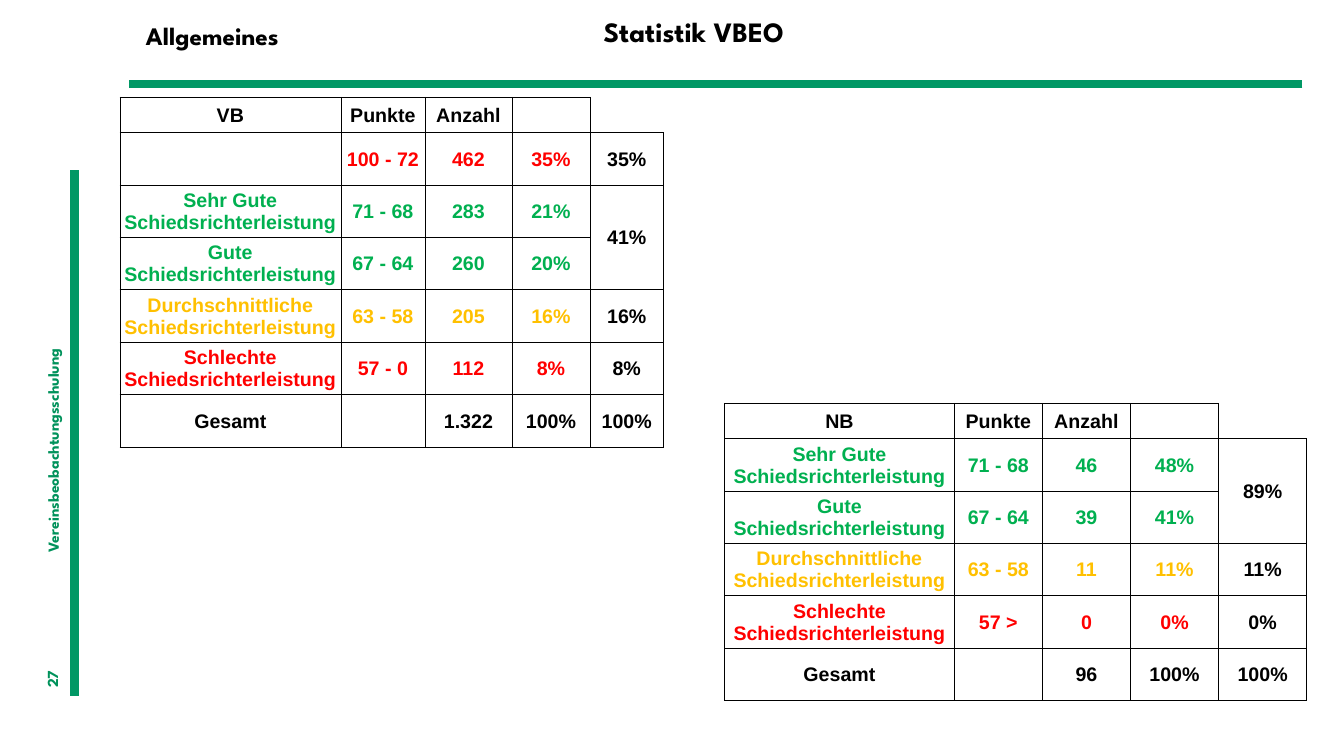
from lxml import etree
from pptx import Presentation
from pptx import util as u
from pptx.dml.color import RGBColor
from pptx.enum import shapes, text
from pptx.oxml.ns import qn

COLOURS = {"rule": "019865", "side": "00925B", "ink": "000000", "paper": "FFFFFF",
           "good": "00B050", "average": "FFC000", "poor": "FF0000"}
HEADING_FONT = "League Spartan"
TABLE_FONT = "Arial"
REFEREEING = "Schiedsrichterleistung"

CLUB_ROWS = [
    ("ink", ["VB", "Punkte", "Anzahl", "", ""]),
    ("poor", ["", "100 - 72", "462", "35%", "35%"]),
    ("good", [f"Sehr Gute\n{REFEREEING}", "71 - 68", "283", "21%", "41%"]),
    ("good", [f"Gute\n{REFEREEING}", "67 - 64", "260", "20%", ""]),
    ("average", [f"Durchschnittliche\n{REFEREEING}", "63 - 58", "205", "16%", "16%"]),
    ("poor", [f"Schlechte\n{REFEREEING}", "57 - 0", "112", "8%", "8%"]),
    ("ink", ["Gesamt", "", "1.322", "100%", "100%"]),
]
NEUTRAL_ROWS = [
    ("ink", ["NB", "Punkte", "Anzahl", "", ""]),
    ("good", [f"Sehr Gute\n{REFEREEING}", "71 - 68", "46", "48%", "89%"]),
    ("good", [f"Gute\n{REFEREEING}", "67 - 64", "39", "41%", ""]),
    ("average", [f"Durchschnittliche\n{REFEREEING}", "63 - 58", "11", "11%", "11%"]),
    ("poor", [f"Schlechte\n{REFEREEING}", "57 >", "0", "0%", "0%"]),
    ("ink", ["Gesamt", "", "96", "100%", "100%"]),
]


def rgb(name):
    """Return the palette colour of that name."""
    return RGBColor.from_string(COLOURS[name])


def write(paragraph, wording, size, font, colour):
    """Add the wording as bold runs, one for each line."""
    for index, line in enumerate(wording.split("\n")):
        if index:
            paragraph.add_line_break()
        run = paragraph.add_run()
        run.text = line
        run.font.size = u.Pt(size)
        run.font.name = font
        run.font.bold = True
        run.font.color.rgb = rgb(colour)


def add_label(slide, box, wording, size, colour="ink", align=text.PP_ALIGN.LEFT, rotation=0):
    """Place a heading text in a box given in centimetres."""
    label = slide.shapes.add_textbox(*map(u.Cm, box))
    label.rotation = rotation
    label.text_frame.word_wrap = True
    paragraph = label.text_frame.paragraphs[0]
    paragraph.alignment = align
    write(paragraph, wording, size, HEADING_FONT, colour)


def add_rule(slide, *ends):
    """Draw a thick green rule between two points in centimetres."""
    rule = slide.shapes.add_connector(shapes.MSO_CONNECTOR.STRAIGHT, *map(u.Cm, ends))
    rule.line.color.rgb = rgb("rule")
    rule.line.width = u.Pt(6)
    etree.SubElement(rule._element.spPr, qn("a:effectLst"))


def set_borders(cell, visible):
    """Give a cell thin black borders on the visible sides and none elsewhere."""
    properties = cell._tc.get_or_add_tcPr()
    for index, side in enumerate("LRTB"):
        border = etree.Element(qn(f"a:ln{side}"), w=str(u.Pt(0.5)))
        if side in visible:
            fill = etree.SubElement(border, qn("a:solidFill"))
            etree.SubElement(fill, qn("a:srgbClr"), val=COLOURS["ink"])
        else:
            etree.SubElement(border, qn("a:noFill"))
        properties.insert(index, border)


def fill_cell(cell, wording, colour, filled, borders):
    """Set the text, fill and borders of one cell."""
    cell.margin_left = cell.margin_right = cell.margin_top = u.Cm(0.03)
    cell.margin_bottom = 0
    cell.vertical_anchor = text.MSO_ANCHOR.MIDDLE
    paragraph = cell.text_frame.paragraphs[0]
    paragraph.alignment = text.PP_ALIGN.CENTER
    if wording:
        write(paragraph, wording, 14, TABLE_FONT, colour)
    if filled:
        cell.fill.solid()
        cell.fill.fore_color.rgb = rgb("paper")
    else:
        cell.fill.background()
    set_borders(cell, borders)


def add_statistics(slide, left, top, widths, rows):
    """Build a rating table whose last column sums up the two good ratings."""
    heights = [0.89] + [1.32] * (len(rows) - 1)
    box = map(u.Cm, (left, top, sum(widths), sum(heights)))
    table = slide.shapes.add_table(len(rows), len(widths), *box).table
    table.first_row = table.horz_banding = False
    for column, width in zip(table.columns, widths):
        column.width = u.Cm(width)
    for row, height in zip(table.rows, heights):
        row.height = u.Cm(height)
    last = len(widths) - 1
    for r, (colour, wordings) in enumerate(rows):
        for c, wording in enumerate(wordings):
            rated = colour != "ink" and c < last
            borders = "LB" if (r, c) == (0, last) else "LRTB"
            fill_cell(table.cell(r, c), wording, colour if rated else "ink", rated, borders)
    good = [r for r, (colour, _) in enumerate(rows) if colour == "good"]
    table.cell(good[0], last).merge(table.cell(good[-1], last))


def add_frame(slide):
    """Draw the rules, the side texts and the headings."""
    add_rule(slide, 1.88, 4.29, 1.88, 17.53)
    add_rule(slide, 32.82, 2.11, 3.25, 2.11)
    add_label(slide, (0.74, 16.56, 1.24, 0.81), "27", 11, "side", rotation=270)
    add_label(slide, (-4.34, 8.05, 11.43, 0.81), "Vereinsbeobachtungsschulung", 11, "side",
              rotation=270)
    add_label(slide, (3.43, 0.38, 5.05, 1.02), "Allgemeines", 18)
    add_label(slide, (14.5, 0.25, 5.97, 1.12), "Statistik VBEO", 20, align=text.PP_ALIGN.CENTER)


def main():
    """Build and save the slide."""
    deck = Presentation()
    deck.slide_width, deck.slide_height = u.Cm(33.87), u.Cm(19.05)
    slide = deck.slides.add_slide(deck.slide_layouts[6])
    add_frame(slide)
    add_statistics(slide, 3.02, 2.45, [5.57, 2.12, 2.19, 1.97, 1.85], CLUB_ROWS)
    add_statistics(slide, 18.26, 10.16, [5.79] + [2.22] * 4, NEUTRAL_ROWS)
    deck.save("out.pptx")


if __name__ == "__main__":
    main()
